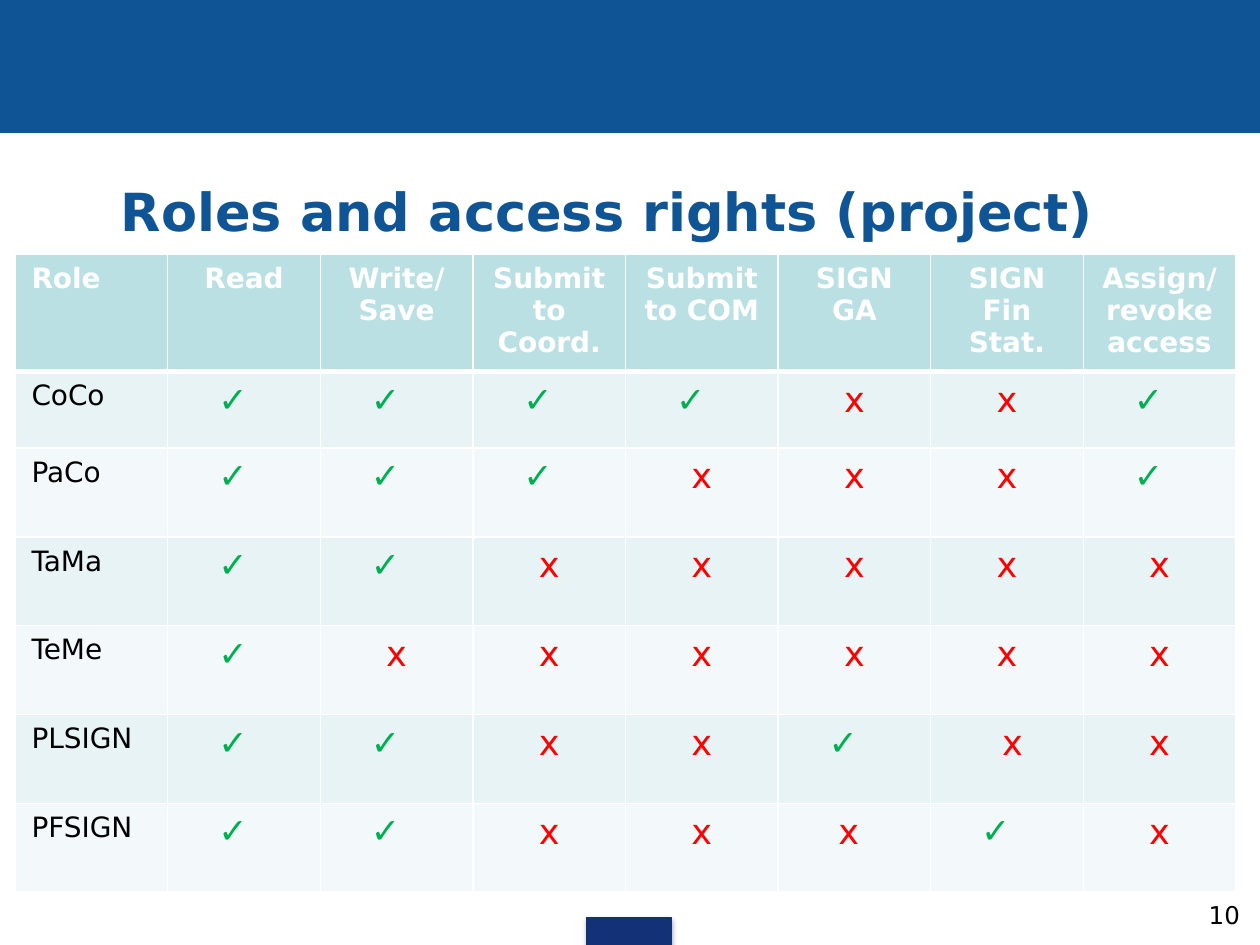
from dataclasses import dataclass

from lxml.etree import SubElement
from pptx import Presentation
from pptx.dml.color import RGBColor
from pptx.enum.shapes import MSO_SHAPE
from pptx.enum.text import MSO_ANCHOR, PP_ALIGN
from pptx.oxml.ns import qn
from pptx.util import Inches, Pt


@dataclass(frozen=True)
class Theme:
    font: str = "DejaVu Sans"
    blue: str = "0F5494"
    navy: str = "133176"
    header: str = "BBE0E3"
    bands: tuple = ("E7F3F4", "F3F9FA")
    white: str = "FFFFFF"
    black: str = "000000"
    green: str = "00B050"
    red: str = "FF0000"
    title_size: int = 30
    mark_size: int = 20
    body_size: int = 16
    number_size: int = 14


theme = Theme()
presentation = Presentation()
presentation.slide_width = Inches(10)
presentation.slide_height = Inches(7.5)
width, height = presentation.slide_width, presentation.slide_height
slide = presentation.slides.add_slide(presentation.slide_layouts[6])


def add_run(paragraph, text, size, color, bold=False):
    run = paragraph.add_run()
    run.text = text
    run.font.name = theme.font
    run.font.size = Pt(size)
    run.font.bold = bold
    run.font.color.rgb = RGBColor.from_string(color)


def add_border(cell, side, points):
    line = SubElement(cell._tc.get_or_add_tcPr(), qn(f"a:{side}"), w=str(Pt(points)))
    fill = SubElement(line, qn("a:solidFill"))
    SubElement(fill, qn("a:srgbClr"), val=theme.white)


# Top banner and footer tab, as shares of the slide
bars = []
for left, top, bar_width, bar_height, color in (
    (0, 0, 1, 0.14, theme.blue),
    (0.466, 0.971, 0.067, 0.029, theme.navy),
):
    bar = slide.shapes.add_shape(
        MSO_SHAPE.RECTANGLE, int(left * width), int(top * height),
        int(bar_width * width), int(bar_height * height))
    bar.shadow.inherit = False
    bar.fill.solid()
    bar.fill.fore_color.rgb = RGBColor.from_string(color)
    bar.line.color.rgb = RGBColor.from_string(color)
    bar.line.width = Pt(0.75)
    bars.append(bar)

# Soft shadow under the footer tab
effects = bars[-1]._element.spPr.find(qn("a:effectLst"))
shadow = SubElement(effects, qn("a:outerShdw"), blurRad=str(Pt(3.1)),
                    dist=str(Pt(1.8)), dir="5400000", rotWithShape="0")
shadow_color = SubElement(shadow, qn("a:srgbClr"), val=theme.black)
SubElement(shadow_color, qn("a:alpha"), val="35000")

# Title
title = slide.shapes.add_textbox(
    int(0.046 * width), int(0.196 * height), int(0.921 * width), int(0.067 * height))
title.text_frame.word_wrap = True
paragraph = title.text_frame.paragraphs[0]
paragraph.line_spacing = 0.8
paragraph._p.get_or_add_pPr().set("marL", str(Inches(0.4)))
add_run(paragraph, "Roles and access rights (project)",
        theme.title_size, theme.blue, bold=True)

# Page number
number = slide.shapes.add_textbox(
    int(0.952 * width), int(0.953 * height), int(0.048 * width), int(0.047 * height))
frame = number.text_frame
frame.word_wrap = True
frame.vertical_anchor = MSO_ANCHOR.BOTTOM
frame.margin_left = frame.margin_top = 0
frame.margin_right, frame.margin_bottom = Inches(0.16), Inches(0.12)
frame.paragraphs[0].alignment = PP_ALIGN.RIGHT
add_run(frame.paragraphs[0], "10", theme.number_size, theme.black)

# Access rights by role
rows = [
    ("Role", "Read", "Write/Save", "Submit to Coord.", "Submit to COM",
     "SIGN GA", "SIGN Fin Stat.", "Assign/revoke access"),
    ("CoCo", "✓", "✓", "✓", "✓", "x", "x", "✓"),
    ("PaCo", "✓", "✓", "✓", "x", "x", "x", "✓"),
    ("TaMa", "✓", "✓", "x", "x", "x", "x", "x"),
    ("TeMe", "✓", "x", "x", "x", "x", "x", "x"),
    ("PLSIGN", "✓", "✓", "x", "x", "✓", " x", "x"),
    ("PFSIGN", "✓", "✓", "x", "x", "x ", "✓", "x"),
]
column_count = len(rows[0])
row_heights = [int((0.081 if index == 1 else 0.094) * height)
               for index in range(len(rows))]
table = slide.shapes.add_table(
    len(rows), column_count, int(0.012 * width), int(0.269 * height),
    int(0.969 * width), sum(row_heights)).table
for column in table.columns:
    column.width = int(0.969 * width / column_count)

for row_index, row in enumerate(rows):
    table.rows[row_index].height = row_heights[row_index]
    is_header = row_index == 0
    for column_index, text in enumerate(row):
        cell = table.cell(row_index, column_index)
        cell.margin_left = cell.margin_right = Inches(0.13)
        cell.margin_top = cell.margin_bottom = Pt(4.75)
        for side in ("lnL", "lnR", "lnT", "lnB"):
            thick = (is_header and side == "lnB") or (row_index == 1 and side == "lnT")
            add_border(cell, side, 3 if thick else 1)
        cell.fill.solid()
        cell.fill.fore_color.rgb = RGBColor.from_string(
            theme.header if is_header else theme.bands[(row_index - 1) % 2])

        paragraph = cell.text_frame.paragraphs[0]
        if column_index > 0:
            paragraph.alignment = PP_ALIGN.CENTER
        if is_header:
            add_run(paragraph, text, theme.body_size, theme.white, bold=True)
        elif column_index == 0:
            add_run(paragraph, text, theme.body_size, theme.black)
        elif text == "✓":
            # A tick is a hanging bullet; the single space makes it show
            properties = paragraph._p.get_or_add_pPr()
            properties.set("marL", str(Inches(0.32)))
            properties.set("indent", str(-Inches(0.32)))
            bullet_color = SubElement(properties, qn("a:buClr"))
            SubElement(bullet_color, qn("a:srgbClr"), val=theme.green)
            SubElement(properties, qn("a:buFont"), typeface=theme.font)
            SubElement(properties, qn("a:buChar"), char=text)
            add_run(paragraph, " ", theme.mark_size, theme.green)
        else:
            add_run(paragraph, text, theme.mark_size, theme.red)

presentation.save("out.pptx")
